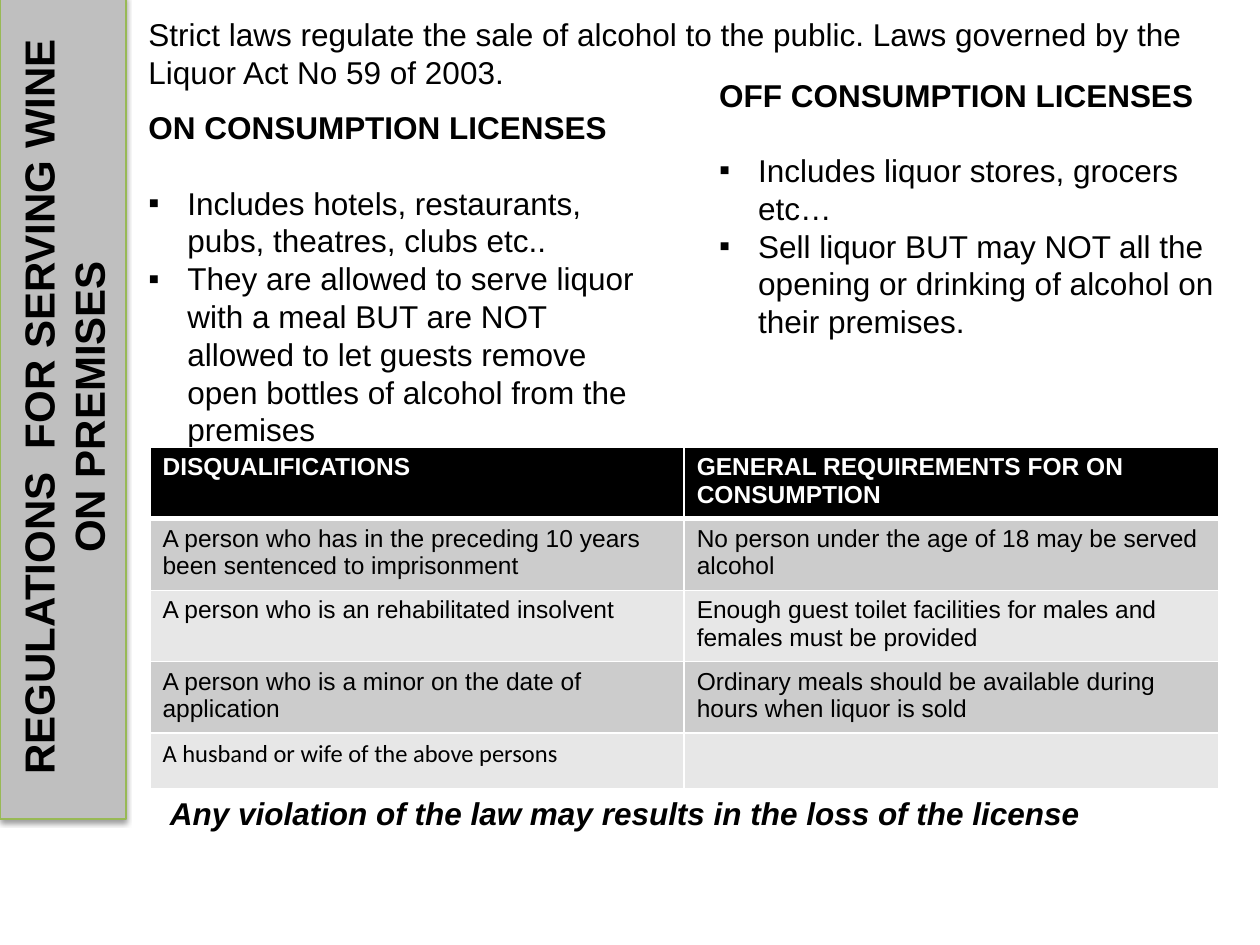
from lxml import etree
from pptx import Presentation
from pptx.dml.color import RGBColor
from pptx.enum import shapes, text
from pptx.oxml import parse_xml
from pptx.oxml.ns import nsdecls, qn
from pptx.util import Inches, Pt

BLACK = RGBColor(0x00, 0x00, 0x00)
WHITE = RGBColor(0xFF, 0xFF, 0xFF)
GREY = RGBColor(0xBF, 0xBF, 0xBF)
GREEN = RGBColor(0x98, 0xB9, 0x55)
BAND_DARK = RGBColor(0xCC, 0xCC, 0xCC)
BAND_LIGHT = RGBColor(0xE7, 0xE7, 0xE7)

ON_POINTS = [
    "Includes hotels, restaurants, pubs, theatres, clubs etc..",
    "They are allowed to serve liquor with a meal BUT are NOT allowed to let guests "
    "remove open bottles of alcohol from the premises",
]
OFF_POINTS = [
    "Includes liquor stores, grocers etc…",
    "Sell liquor BUT may NOT all the opening or drinking of alcohol on their premises.",
]
RULES = [
    ("DISQUALIFICATIONS", "GENERAL REQUIREMENTS FOR ON CONSUMPTION"),
    ("A person who has in the preceding 10 years been sentenced to imprisonment",
     "No person under the age of 18 may be served alcohol"),
    ("A person who is an rehabilitated insolvent",
     "Enough guest toilet facilities for males and females must be provided"),
    ("A person who is a minor on the date of application",
     "Ordinary meals should be available during hours when liquor is sold"),
    ("A husband or wife of the above persons", ""),
]
ROW_HEIGHTS = [0.53, 0.55, 0.55, 0.55, 0.44]


def write(p, words, size=18, bold=False, italic=False, color=BLACK, font="Arial"):
    """Add one formatted run to a paragraph."""
    r = p.add_run()
    r.text = words
    r.font.size = Pt(size)
    r.font.name = font
    r.font.bold = bold
    r.font.italic = italic
    r.font.color.rgb = color


def add_box(s, left, top, width, height):
    """Add a wrapping text box and return its text frame."""
    tf = s.shapes.add_textbox(Inches(left), Inches(top), Inches(width), Inches(height)).text_frame
    tf.word_wrap = True
    return tf


def add_bullet(p):
    """Give a paragraph a square bullet with a hanging indent."""
    pPr = p._p.get_or_add_pPr()
    pPr.set("marL", str(Inches(0.31)))
    pPr.set("indent", str(-Inches(0.31)))
    etree.SubElement(pPr, qn("a:buFont")).set("typeface", "Arial")
    etree.SubElement(pPr, qn("a:buChar")).set("char", "▪")


def add_sidebar(s, left, top, width, height):
    """Add the title bar whose text reads upwards."""
    sp = s.shapes.add_shape(
        shapes.MSO_SHAPE.RECTANGLE, Inches(left + (width - height) / 2),
        Inches(top + (height - width) / 2), Inches(height), Inches(width))
    sp.rotation = 270
    sp.fill.solid()
    sp.fill.fore_color.rgb = GREY
    sp.line.color.rgb = GREEN
    sp.line.width = Pt(0.75)
    sp.shadow.inherit = False
    sp._element.spPr.find(qn("a:effectLst")).append(parse_xml(
        f'<a:outerShdw {nsdecls("a")} blurRad="{Pt(3.1)}" dist="{Pt(1.6)}" dir="5400000" '
        'rotWithShape="0"><a:srgbClr val="000000"><a:alpha val="38000"/></a:srgbClr>'
        '</a:outerShdw>'))
    tf = sp.text_frame
    tf.word_wrap = True
    tf.vertical_anchor = text.MSO_ANCHOR.MIDDLE
    p = tf.paragraphs[0]
    p.alignment = text.PP_ALIGN.CENTER
    write(p, "REGULATIONS  FOR SERVING WINE ON PREMISES", size=24, bold=True)


def add_licenses(s, left, top, width, height, heading, points):
    """Add a license heading with its bulleted points."""
    tf = add_box(s, left, top, width, height)
    p = tf.paragraphs[0]
    p.space_after = Pt(21.5)
    write(p, heading, bold=True)
    for point in points:
        p = tf.add_paragraph()
        add_bullet(p)
        write(p, point)


def add_borders(cell, bottom):
    """Draw white borders round a cell, with the given bottom width."""
    tcPr = cell._tc.get_or_add_tcPr()
    for i, side in enumerate(("lnL", "lnR", "lnT", "lnB")):
        width = Pt(bottom if side == "lnB" else 1)
        tcPr.insert(i, parse_xml(
            f'<a:{side} {nsdecls("a")} w="{width}"><a:solidFill>'
            f'<a:srgbClr val="{WHITE}"/></a:solidFill></a:{side}>'))


def add_rules(s, left, top, width):
    """Add the table of disqualifications and requirements."""
    table = s.shapes.add_table(
        len(RULES), 2, Inches(left), Inches(top), Inches(width),
        Inches(sum(ROW_HEIGHTS))).table
    for col in table.columns:
        col.width = Inches(width / 2)
    for i, (row, height) in enumerate(zip(RULES, ROW_HEIGHTS)):
        header = i == 0
        last = i == len(RULES) - 1
        table.rows[i].height = Inches(height)
        for j, words in enumerate(row):
            cell = table.cell(i, j)
            cell.fill.solid()
            cell.fill.fore_color.rgb = BLACK if header else BAND_DARK if i % 2 else BAND_LIGHT
            add_borders(cell, 3 if header else 1)
            if words:
                write(cell.text_frame.paragraphs[0], words, size=14, bold=header,
                      color=WHITE if header else BLACK, font="Calibri" if last else "Arial")


def main():
    """Build and save the slide."""
    prs = Presentation()
    prs.slide_width, prs.slide_height = Inches(10), Inches(7.5)
    s = prs.slides.add_slide(prs.slide_layouts[6])
    add_sidebar(s, 0, -0.04, 1, 6.54)
    write(add_box(s, 1.08, 0.07, 8.58, 0.71).paragraphs[0],
          "Strict laws regulate the sale of alcohol to the public. "
          "Laws governed by the Liquor Act No 59 of 2003.")
    add_licenses(s, 1.08, 0.81, 4.17, 2.83, "ON CONSUMPTION LICENSES", ON_POINTS)
    add_licenses(s, 5.61, 0.55, 4.37, 2.52, "OFF CONSUMPTION LICENSES", OFF_POINTS)
    write(add_box(s, 1.25, 6.25, 7.58, 0.4).paragraphs[0],
          "Any violation of the law may results in the loss of the license",
          bold=True, italic=True)
    add_rules(s, 1.19, 3.55, 8.48)
    prs.save("out.pptx")


if __name__ == "__main__":
    main()
